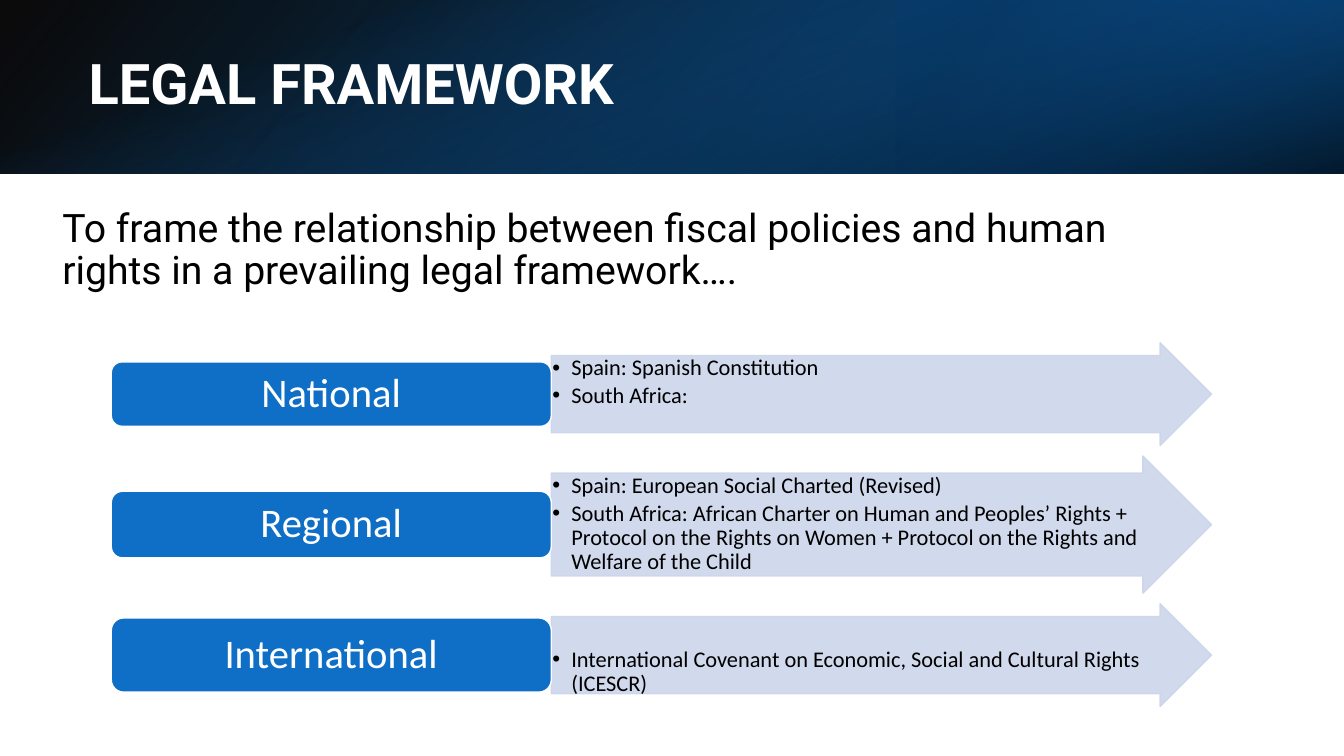
import pptx
import pptx.dml.color
import pptx.enum.shapes
import pptx.enum.text
import pptx.oxml.ns
import pptx.util
from lxml import etree

Pt = pptx.util.Pt
qn = pptx.oxml.ns.qn
SHAPE = pptx.enum.shapes.MSO_SHAPE
ANCHOR = pptx.enum.text.MSO_ANCHOR
ALIGN = pptx.enum.text.PP_ALIGN


def color(value):
    return pptx.dml.color.RGBColor.from_string(value)


def set_alpha(sp, *percents):
    """Give the shape's colours, in order, their opacity."""
    for clr, percent in zip(sp._element.spPr.iter(qn("a:srgbClr")), percents):
        etree.SubElement(clr, qn("a:alpha")).set("val", str(percent * 1000))


class Deck:
    heading_font = "Roboto"
    diagram_font = "Calibri"
    blue, pale, white, black = "0F6FC6", "CCD5EA", "FFFFFF", "000000"

    def __init__(self, slide):
        self.slide = slide

    def shape(self, kind, x, y, w, h):
        sp = self.slide.shapes.add_shape(kind, Pt(x), Pt(y), Pt(w), Pt(h))
        sp.shadow.inherit = False
        return sp

    def gradient(self, x, y, w, h, stops, angle, rotation=0, flip=False):
        sp = self.shape(SHAPE.RECTANGLE, x, y, w, h)
        sp.line.fill.background()
        sp.rotation = rotation
        if flip:
            sp._element.spPr.xfrm.set("flipH", "1")
        sp.fill.gradient()
        sp.fill.gradient_angle = 360 - angle
        for stop, (position, value, _) in zip(sp.fill.gradient_stops, stops):
            stop.position = position
            stop.color.rgb = color(value)
        set_alpha(sp, *[alpha for _, _, alpha in stops])

    def set_text(self, sp, lines, font, size, value, insets, anchor=ANCHOR.TOP,
                 align=ALIGN.LEFT, after=0, bold=False):
        tf = sp.text_frame
        tf.word_wrap = True
        tf.vertical_anchor = anchor
        tf.margin_left, tf.margin_top, tf.margin_right, tf.margin_bottom = map(Pt, insets)
        tf.text = "\n".join(lines)
        for p in tf.paragraphs:
            p.alignment = align
            p.line_spacing = 0.9
            p.space_after = Pt(after)
            for r in p.runs:
                r.font.name = font
                r.font.size = Pt(size)
                r.font.bold = bold
                r.font.color.rgb = color(value)
        return tf

    def text(self, x, y, w, h, line, size, value, **style):
        sp = self.slide.shapes.add_textbox(Pt(x), Pt(y), Pt(w), Pt(h))
        self.set_text(sp, [line], self.heading_font, size, value, (7.2, 3.6, 7.2, 3.6), **style)

    def arrow(self, x, y, w, h, lines, top):
        sp = self.shape(SHAPE.RIGHT_ARROW, x, y, w, h)
        sp.adjustments[0], sp.adjustments[1] = 0.75, 0.5
        sp.fill.solid()
        sp.fill.fore_color.rgb = color(self.pale)
        sp.line.color.rgb = color(self.pale)
        sp.line.width = Pt(1)
        set_alpha(sp, 90, 90)
        tf = self.set_text(sp, lines, self.diagram_font, 16, self.black,
                           (0.8, top, 0.8, 0.8), after=2.4)
        for p in tf.paragraphs:
            pPr = p._p.get_or_add_pPr()
            pPr.set("marL", str(Pt(13.5)))
            pPr.set("indent", str(-Pt(13.5)))
            etree.SubElement(pPr, qn("a:buFont")).set("typeface", "Arial")
            etree.SubElement(pPr, qn("a:buChar")).set("char", "•")

    def label(self, x, y, w, h, line):
        sp = self.shape(SHAPE.ROUNDED_RECTANGLE, x, y, w, h)
        sp.fill.solid()
        sp.fill.fore_color.rgb = color(self.blue)
        sp.line.color.rgb = color(self.white)
        sp.line.width = Pt(1)
        self.set_text(sp, [line], self.diagram_font, 29, self.white, (8.6, 4.3, 8.6, 4.3),
                      anchor=ANCHOR.MIDDLE, align=ALIGN.CENTER)


def main():
    prs = pptx.Presentation()
    prs.slide_width, prs.slide_height = Pt(960), Pt(540)
    deck = Deck(prs.slides.add_slide(prs.slide_layouts[6]))

    # Header band: three layered gradients
    band = 124
    deck.gradient(0, 0, 960, band, [(0, "000000", 96), (1, "0B5394", 100)], 140, flip=True)
    deck.gradient(640, 0, 320, band, [(0.19, "083763", 68), (1, deck.blue, 79)], 320,
                  rotation=180, flip=True)
    deck.gradient((960 - band) / 2, (band - 960) / 2, band, 960,
                  [(0.23, deck.blue, 0), (0.99, "000000", 74)], 340, rotation=90)

    # Title and introduction
    deck.text(56.2, 27.4, 790.6, 69, "LEGAL FRAMEWORK", 40, deck.white,
              anchor=ANCHOR.MIDDLE, bold=True)
    deck.text(37.5, 145.5, 828, 78,
              "To frame the relationship between fiscal policies and human "
              "rights in a prevailing legal framework….", 28, deck.black)

    # Legal levels: name, label height, arrow height, top inset, points
    levels = [
        ("National", 46, 73.4, 0.8, ["Spain: Spanish Constitution", "South Africa:"]),
        ("Regional", 47.5, 98, 0.8, [
            "Spain: European Social Charted (Revised)",
            "South Africa: African Charter on Human and Peoples’ Rights + Protocol on the "
            "Rights on Women + Protocol on the Rights and Welfare of the Child"]),
        ("International", 53, 73.4, 22.8, [
            "International Covenant on Economic, Social and Cultural Rights (ICESCR)"]),
    ]
    left, split, right = 79.5, 393.8, 865.4
    for i, (name, label_h, arrow_h, top, points) in enumerate(levels):
        middle = 281.5 + 93.2 * i
        deck.arrow(split, middle - arrow_h / 2, right - split, arrow_h, points, top)
        deck.label(left, middle - label_h / 2, split - left, label_h, name)

    prs.save("out.pptx")


if __name__ == "__main__":
    main()
